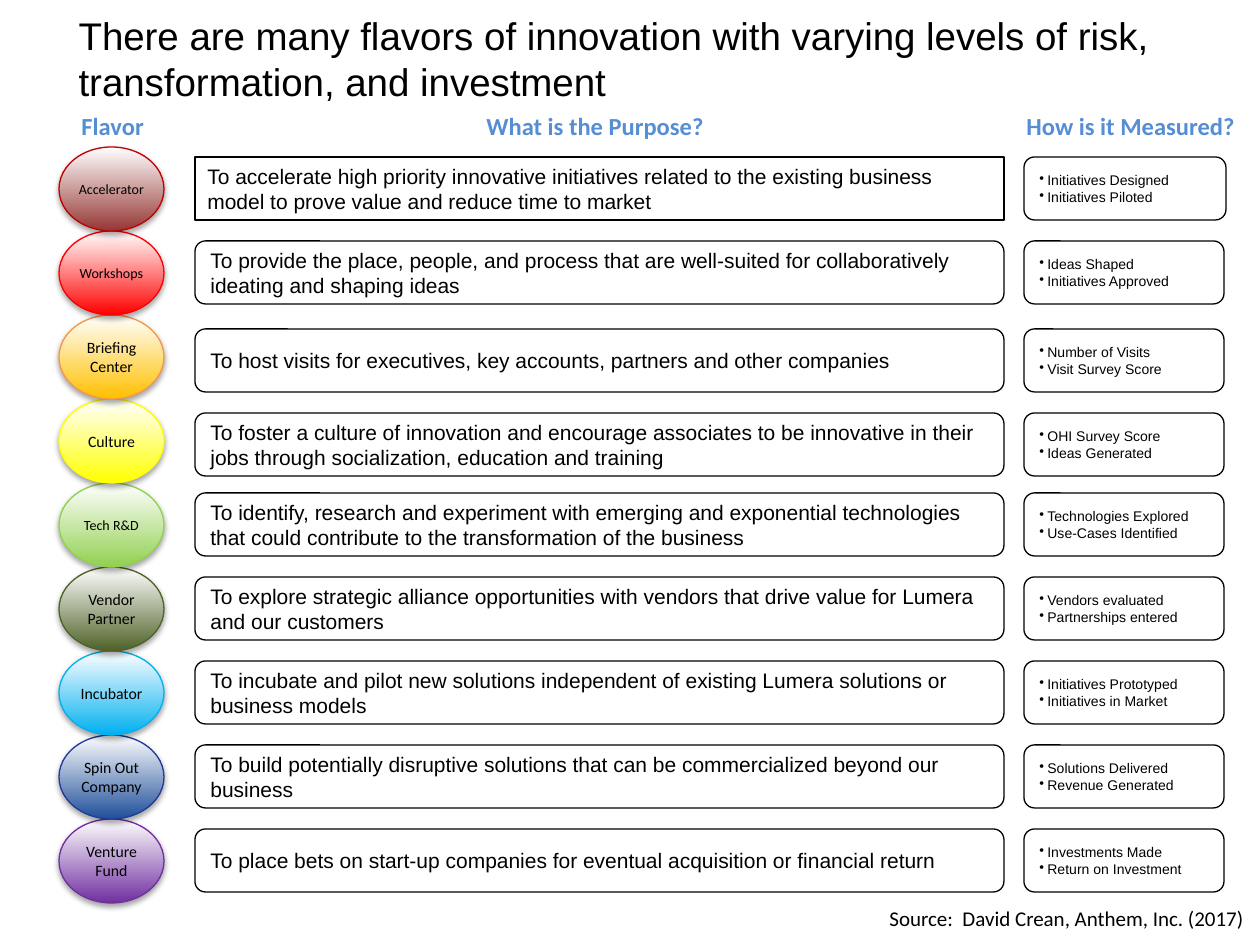
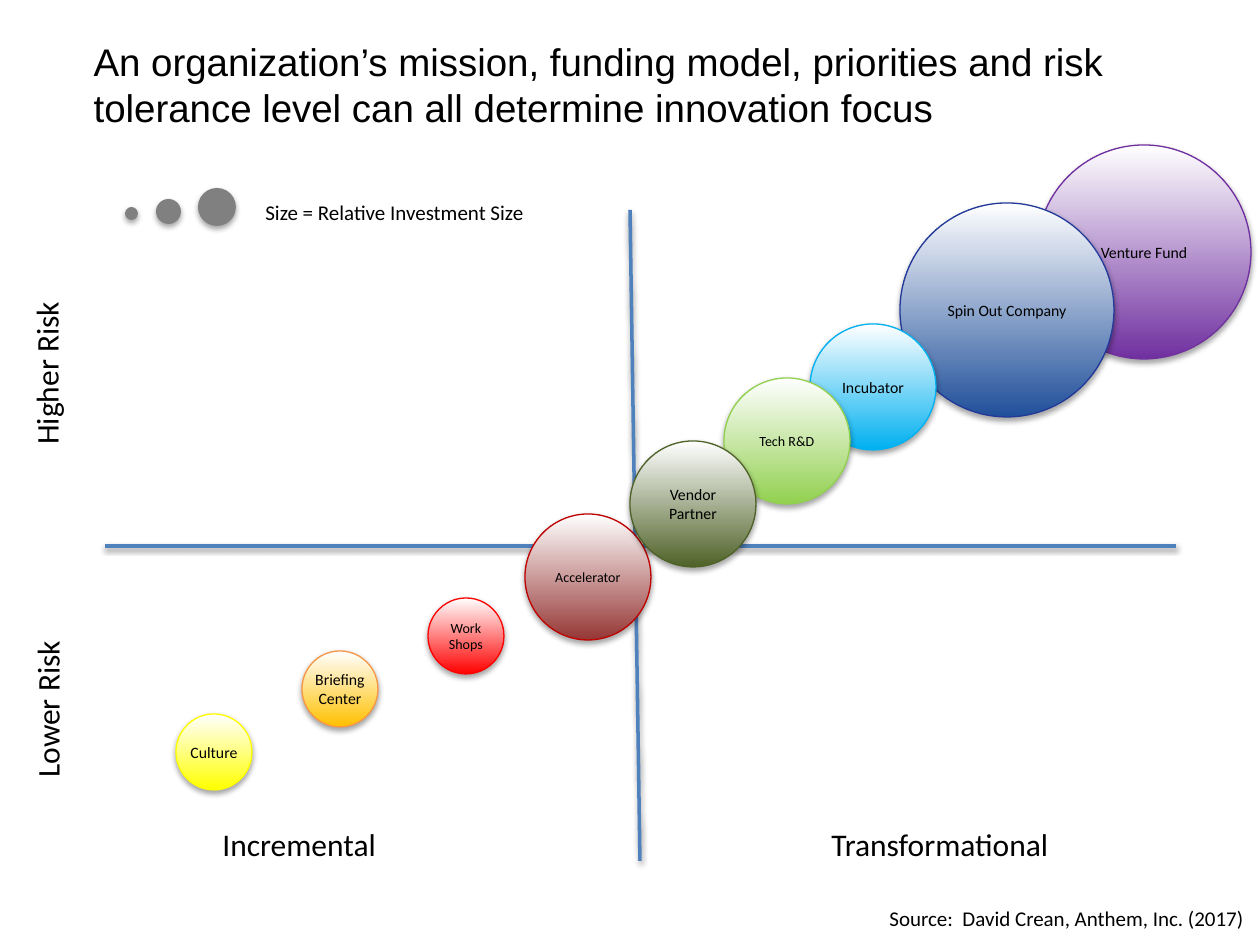
import pptx
import pptx.util
import pptx.dml.color
import pptx.enum.shapes
import pptx.enum.text
import pptx.oxml
import pptx.oxml.ns

# Shared style
SCALE = 914400 / 126
HEX = {
    "text": "000000", "head": "558ED5", "axis": "4F81BD", "dot": "808080",
    "brick": "953735", "crimson": "C00000", "red": "FF0000",
    "gold": "FFC000", "orange": "F79646", "yellow": "FFFF00",
    "lime": "92D050", "olive": "4F6228", "sky": "00B0F0",
    "blue": "204F9A", "navy": "22399A", "purple": "7030A0", "white": "FFFFFF",
}
SOURCE = "Source:  David Crean, Anthem, Inc. (2017)"

# Flavor: fill, edge, text size, purpose, measures
FLAVORS = {
    "Accelerator": ("brick", "crimson", 8,
        "To accelerate high priority innovative initiatives related to the existing "
        "business model to prove value and reduce time to market",
        ["Initiatives Designed", "Initiatives Piloted"]),
    "Workshops": ("red", "red", 8,
        "To provide the place, people, and process that are well-suited for "
        "collaboratively ideating and shaping ideas",
        ["Ideas Shaped", "Initiatives Approved"]),
    "Briefing Center": ("gold", "orange", 9,
        "To host visits for executives, key accounts, partners and other companies",
        ["Number of Visits", "Visit Survey Score"]),
    "Culture": ("yellow", "yellow", 9,
        "To foster a culture of innovation and encourage associates to be innovative "
        "in their jobs through socialization, education and training",
        ["OHI Survey Score", "Ideas Generated"]),
    "Tech R&D": ("lime", "lime", 8,
        "To identify, research and experiment with emerging and exponential "
        "technologies that could contribute to the transformation of the business",
        ["Technologies Explored", "Use-Cases Identified"]),
    "Vendor Partner": ("olive", "olive", 9,
        "To explore strategic alliance opportunities with vendors that drive value "
        "for Lumera and our customers",
        ["Vendors evaluated", "Partnerships entered"]),
    "Incubator": ("sky", "sky", 9,
        "To incubate and pilot new solutions independent of existing Lumera "
        "solutions or business models",
        ["Initiatives Prototyped", "Initiatives in Market"]),
    "Spin Out Company": ("blue", "navy", 9,
        "To build potentially disruptive solutions that can be commercialized "
        "beyond our business",
        ["Solutions Delivered", "Revenue Generated"]),
    "Venture Fund": ("purple", "purple", 9,
        "To place bets on start-up companies for eventual acquisition or "
        "financial return",
        ["Investments Made", "Return on Investment"]),
}
HEADS = [("Flavor", 69, 88), ("What is the Purpose?", 474, 244),
         ("How is it Measured?", 1014, 236)]
TOP, STEP = 147, 84
NUDGE = {2: 4, 3: 4}  # rows whose boxes sit a little lower

# Bubbles, back to front: flavor, left, top, size
BUBBLES = [
    ("Venture Fund", 1037, 145, 214), ("Spin Out Company", 900, 203, 214),
    ("Incubator", 810, 324, 126), ("Workshops", 428, 598, 76),
    ("Culture", 176, 714, 76), ("Briefing Center", 302, 651, 76),
    ("Tech R&D", 724, 378, 126), ("Accelerator", 525, 514, 126),
    ("Vendor Partner", 630, 441, 126),
]
RENAME = {"Workshops": "Work Shops"}
DOTS = [(125, 207, 13), (156, 199, 25), (198, 188, 38)]
AXES = [(630, 210, 640, 861), (1176, 546, 105, 546)]
# Label: left, top, width, height, size, turn
LABELS = [
    ("Higher Risk", -39, 347, 170, 50, 18, 270),
    ("Lower Risk", -35, 683, 164, 50, 18, 270),
    ("Incremental", 210, 819, 181, 50, 18, 0),
    ("Transformational", 819, 819, 248, 50, 18, 0),
    ("Size = Relative Investment Size", 253, 193, 289, 38, 12, 0),
]

ALIGN = pptx.enum.text.PP_ALIGN
ANCHOR = pptx.enum.text.MSO_ANCHOR
SHAPE = pptx.enum.shapes.MSO_SHAPE


def px(*vals):
    return [pptx.util.Emu(round(v * SCALE)) for v in vals]


def rgb(name):
    return pptx.dml.color.RGBColor.from_string(HEX[name])


def style(para, size, face="Calibri", color="text", bold=False, align=ALIGN.LEFT):
    para.alignment = align
    font = para.font
    font.size, font.name, font.bold = pptx.util.Pt(size), face, bold
    font.color.rgb = rgb(color)


def shade(shape, dist=23000, alpha=35000):
    """Soft shadow straight below the shape."""
    props = shape._element.spPr
    for old in props.findall(pptx.oxml.ns.qn("a:effectLst")):
        props.remove(old)
    props.append(pptx.oxml.parse_xml(
        f'<a:effectLst {pptx.oxml.ns.nsdecls("a")}>'
        f'<a:outerShdw blurRad="40000" dist="{dist}" dir="5400000" rotWithShape="0">'
        f'<a:srgbClr val="000000"><a:alpha val="{alpha}"/></a:srgbClr>'
        '</a:outerShdw></a:effectLst>'))


def bullet(para):
    props = para._p.get_or_add_pPr()
    indent = px(8)[0]
    props.set("marL", str(indent))
    props.set("indent", str(-indent))
    mark = pptx.oxml.parse_xml(
        f'<a:buChar {pptx.oxml.ns.nsdecls("a")} char="•"/>')
    props.append(mark)


def title(slide, text, *box):
    shape = slide.shapes.title
    shape.left, shape.top, shape.width, shape.height = px(*box)
    frame = shape.text_frame
    frame.text = text
    frame.auto_size = pptx.enum.text.MSO_AUTO_SIZE.NONE
    frame.vertical_anchor = ANCHOR.TOP
    style(frame.paragraphs[0], 22, "Arial")


def label(slide, text, x, y, w, h, size, turn=0, **look):
    shape = slide.shapes.add_textbox(*px(x, y, w, h))
    shape.rotation = turn
    frame = shape.text_frame
    frame.text = text
    frame.word_wrap = False
    frame.auto_size = pptx.enum.text.MSO_AUTO_SIZE.SHAPE_TO_FIT_TEXT
    style(frame.paragraphs[0], size, **look)


def ball(slide, name, text, *box):
    fill, edge, size = FLAVORS[name][:3]
    shape = slide.shapes.add_shape(SHAPE.OVAL, *px(*box))
    shape.fill.gradient()
    shape.fill.gradient_angle = 90
    for stop, tone, at in zip(shape.fill.gradient_stops, (fill, "white"), (0, 1)):
        stop.color.rgb, stop.position = rgb(tone), at
    shape.line.color.rgb = rgb(edge)
    shape.line.width = pptx.util.Pt(0.75)
    shade(shape)
    frame = shape.text_frame
    frame.text = text
    frame.word_wrap = True
    frame.vertical_anchor = ANCHOR.MIDDLE
    frame.margin_left = frame.margin_right = 0
    frame.margin_top = frame.margin_bottom = 0
    style(frame.paragraphs[0], size, align=ALIGN.CENTER)


def panel(slide, lines, size, *box, marks=False):
    shape = slide.shapes.add_shape(SHAPE.ROUNDED_RECTANGLE, *px(*box))
    shape.fill.background()
    shape.line.color.rgb = rgb("text")
    shape.line.width = pptx.util.Pt(0.75)
    shape.shadow.inherit = False
    frame = shape.text_frame
    frame.text = "\n".join(lines)
    frame.word_wrap = True
    frame.vertical_anchor = ANCHOR.MIDDLE
    for para in frame.paragraphs:
        if marks:
            bullet(para)
        style(para, size, "Arial")
    return shape


def start(deck, text, *box):
    slide = deck.slides.add_slide(deck.slide_layouts[5])
    title(slide, text, *box)
    label(slide, SOURCE, 877, 899, 384, 38, 12)
    return slide


def table(deck):
    slide = start(deck, "There are many flavors of innovation with varying levels "
                  "of risk, transformation, and investment", 66, 6, 1191, 47)
    for text, x, w in HEADS:
        label(slide, text, x, 105, w, 43, 14, color="head", bold=True)
    # Lower rows first, so each shadow falls on the ball below
    for i, (name, row) in reversed(list(enumerate(FLAVORS.items()))):
        y = TOP + STEP * i
        ball(slide, name, name, 59, y, 105, STEP)
        y += 10 + NUDGE.get(i, 0)
        aim = panel(slide, [row[3]], 12, 195, y, 809, 63)
        if i == 0:
            aim.adjustments[0] = 0
        panel(slide, row[4], 8, 1024, y, 202 if i == 0 else 200, 63, marks=True)


def chart(deck):
    slide = start(deck, "An organization’s mission, funding model, priorities and "
                  "risk tolerance level can all determine innovation focus",
                  81, 32, 1075, 103)
    # Axes and labels
    for ends in AXES:
        line = slide.shapes.add_connector(
            pptx.enum.shapes.MSO_CONNECTOR.STRAIGHT, *px(*ends))
        line.line.color.rgb = rgb("axis")
        line.line.width = pptx.util.Pt(2)
        shade(line, 20000, 38000)
    for item in LABELS:
        label(slide, *item)
    # Bubbles and size key
    for name, x, y, size in BUBBLES:
        ball(slide, name, RENAME.get(name, name), x, y, size, size)
    for x, y, size in DOTS:
        dot = slide.shapes.add_shape(SHAPE.OVAL, *px(x, y, size, size))
        dot.fill.solid()
        dot.fill.fore_color.rgb = rgb("dot")
        dot.line.fill.background()
        shade(dot)


def main():
    deck = pptx.Presentation()
    deck.slide_width, deck.slide_height = px(1260, 945)
    table(deck)
    chart(deck)
    deck.save("out.pptx")


if __name__ == "__main__":
    main()
